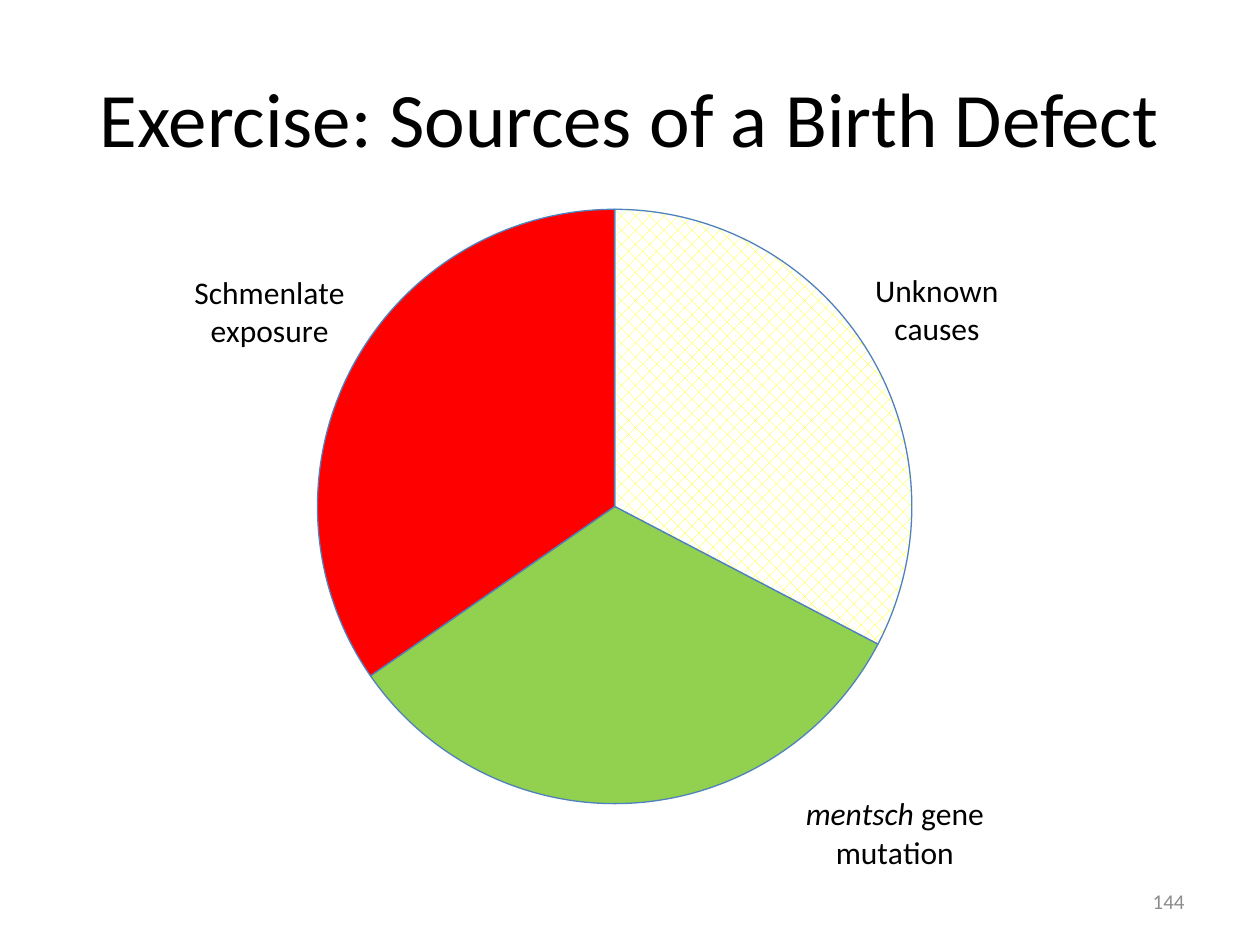
from lxml import etree
from pptx import Presentation
from pptx import util as u
from pptx.chart import data as cd
from pptx.dml.color import RGBColor
from pptx.enum import chart as ch, dml, text
from pptx.oxml.ns import qn

FACE = "Calibri"
W, H = 10, 7.5


def style(font, size, color):
    font.name, font.size = FACE, u.Pt(size)
    font.color.rgb = RGBColor.from_string(color)


def place(parent, index, **values):
    for old in parent.findall(qn("c:layout")):
        parent.remove(old)
    layout = etree.Element(qn("c:layout"))
    manual = etree.SubElement(layout, qn("c:manualLayout"))
    for tag, value in values.items():
        etree.SubElement(manual, qn("c:" + tag)).set("val", str(value))
    parent.insert(index, layout)


deck = Presentation()
deck.slide_width, deck.slide_height = u.Inches(W), u.Inches(H)
slide = deck.slides.add_slide(deck.slide_layouts[5])

title = slide.shapes.title
title.left, title.top = u.Inches(0.05 * W), u.Inches(0.04 * H)
title.width, title.height = u.Inches(0.9 * W), u.Inches(1.25)
title.text_frame.text = "Exercise: Sources of a Birth Defect"
title.text_frame.vertical_anchor = text.MSO_ANCHOR.MIDDLE
head = title.text_frame.paragraphs[0]
head.alignment = text.PP_ALIGN.CENTER
style(head.font, 44, "000000")

data = cd.CategoryChartData()
data.categories = ["1st Qtr", "2nd Qtr", "3rd Qtr"]
data.add_series("Series 1", [33, 33, 35])
frame = slide.shapes.add_chart(
    ch.XL_CHART_TYPE.PIE, u.Inches(0.42), u.Inches(1.42),
    u.Inches(8.64), u.Inches(5.83), data)
pie = frame.chart
pie.has_legend = pie.has_title = False
style(pie.font, 18, "000000")
pie.plots[0].vary_by_categories = True
area = pie.element.find(".//" + qn("c:plotArea"))
place(area, 0, layoutTarget="inner", xMode="edge", yMode="edge",
      x=0.243, y=0.041, w=0.546, h=0.81)

causes = [
    (None, ["Unknown", "causes"], 0, 0),
    ("92D050", ["mentsch gene", "mutation"], 0.24, -0.02),
    ("FF0000", ["Schmenlate", "exposure"], 0, -0.02),
]
series = pie.plots[0].series[0]
for i, (color, lines, dx, dy) in enumerate(causes):
    point = series.points[i]
    fill = point.format.fill
    if color:
        fill.solid()
        fill.fore_color.rgb = RGBColor.from_string(color)
    else:
        fill.patterned()
        fill.pattern = dml.MSO_PATTERN.PERCENT_25
        fill.fore_color.rgb = RGBColor.from_string("FFFF00")
        fill.back_color.rgb = RGBColor.from_string("FFFFFF")
    point.format.line.color.rgb = RGBColor.from_string("4F81BD")
    point.format.line.width = u.Pt(0.75)

    label = point.data_label
    body = label.text_frame
    for n, line in enumerate(lines):
        para = body.paragraphs[0] if n == 0 else body.add_paragraph()
        para.alignment = text.PP_ALIGN.CENTER
        first, gap, rest = line.partition(" ")
        for part in filter(None, [first, gap + rest]):
            run = para.add_run()
            run.text = part
            style(run.font, 18, "000000")
            run.font.italic = part == "mentsch"
    label.position = ch.XL_LABEL_POSITION.OUTSIDE_END
    if dx or dy:
        mark = pie.element.findall(".//" + qn("c:dLbl"))[i]
        place(mark, 1, x=dx, y=dy)

for lead in pie.element.iter(qn("c:showLeaderLines")):
    lead.set("val", "0")

box = slide.shapes.add_textbox(
    u.Inches(7.17), u.Inches(6.95), u.Inches(2.33), u.Inches(0.4))
box.text_frame.word_wrap = True
box.text_frame.vertical_anchor = text.MSO_ANCHOR.MIDDLE
page = box.text_frame.paragraphs[0]
page.text = "144"
page.alignment = text.PP_ALIGN.RIGHT
style(page.font, 12, "8C8C8C")

deck.save("out.pptx")
